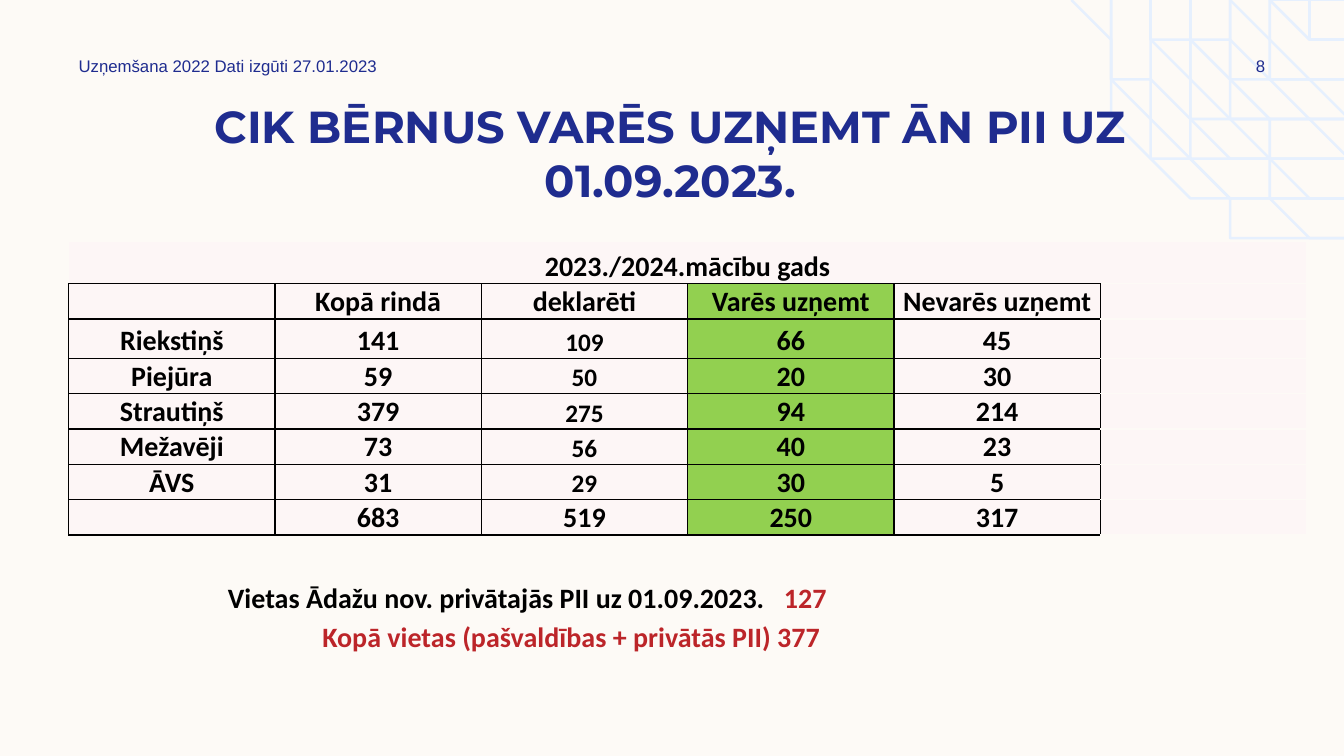
from dataclasses import dataclass
from math import asin, cos, pi, sin

from pptx import Presentation
from pptx import util as u
from pptx.dml.color import RGBColor
from pptx.enum import text
from pptx.oxml import parse_xml
from pptx.oxml.ns import nsdecls

WIDTH, HEIGHT = 33.87, 19.05
COL_WIDTH = 5.2
ROW_HEIGHTS = [1.07, 0.89, 0.99] + [0.89] * 5
CAPTION = "2023./2024.mācību gads"
ROWS = [
    ["", "Kopā rindā", "deklarēti", "Varēs uzņemt", "Nevarēs uzņemt"],
    ["Riekstiņš", "141", "109", "66", "45"],
    ["Piejūra", "59", "50", "20", "30"],
    ["Strautiņš", "379", "275", "94", "214"],
    ["Mežavēji", "73", "56", "40", "23"],
    ["ĀVS", "31", "29", "30", "5"],
    ["", "683", "519", "250", "317"],
]
DECLARED, ADMITTED = 2, 3


@dataclass(frozen=True)
class Theme:
    paper: str = "FDFAF6"
    ring: str = "E6F0FE"
    navy: str = "1F2C8F"
    black: str = "000000"
    red: str = "BC2529"
    cell: str = "FDF6F6"
    green: str = "92D050"
    title: int = 32
    body: int = 20
    declared: int = 18
    small: int = 12


class Deck:
    def __init__(self, theme):
        self.theme = theme
        self.prs = Presentation()
        self.prs.slide_width, self.prs.slide_height = u.Cm(WIDTH), u.Cm(HEIGHT)
        self.s = self.prs.slides.add_slide(self.prs.slide_layouts[6])
        self.paint(self.s.background.fill, theme.paper)

    @staticmethod
    def paint(fill, color):
        fill.solid()
        fill.fore_color.rgb = RGBColor.from_string(color)

    @staticmethod
    def style(p, font, size, color, bold=False, align=text.PP_ALIGN.LEFT):
        p.alignment = align
        p.font.name, p.font.size, p.font.bold = font, u.Pt(size), bold
        p.font.color.rgb = RGBColor.from_string(color)

    def text_box(self, x, y, w, h, anchor=text.MSO_ANCHOR.TOP):
        tf = self.s.shapes.add_textbox(u.Cm(x), u.Cm(y), u.Cm(w), u.Cm(h)).text_frame
        tf.word_wrap, tf.vertical_anchor = True, anchor
        return tf

    def label(self, words, x, y, w, h, font, size, bold=False,
              align=text.PP_ALIGN.LEFT, anchor=text.MSO_ANCHOR.MIDDLE):
        p = self.text_box(x, y, w, h, anchor).paragraphs[0]
        p.text = words
        self.style(p, font, size, self.theme.navy, bold, align)

    def rings(self, cx, cy, first, step, count, line_width):
        """Draw concentric arcs, cut off at the top and right slide edges."""
        builder = None
        for i in range(count):
            radius = first + i * step
            start = asin(-cy / radius)
            segments = 4 + i // 2
            angles = [start + (pi / 2 - start) * k / segments for k in range(segments + 1)]
            points = [(cx - radius * cos(a), cy + radius * sin(a)) for a in angles]
            if builder is None:
                builder = self.s.shapes.build_freeform(*points[0], scale=u.Cm(1))
            else:
                builder.move_to(*points[0])
            builder.add_line_segments(points[1:], close=False)
        sp = builder.convert_to_shape()
        sp.shadow.inherit = False
        sp.fill.background()
        sp.line.width = u.Pt(line_width)
        sp.line.color.rgb = RGBColor.from_string(self.theme.ring)

    def cell(self, cell, words, size, fill, edges):
        """Fill one cell; edges holds the left, right, top and bottom line colours."""
        cell.margin_left = cell.margin_right = cell.margin_top = u.Cm(0.02)
        cell.margin_bottom = 0
        cell.vertical_anchor = text.MSO_ANCHOR.BOTTOM
        p = cell.text_frame.paragraphs[0]
        p.text = words
        self.style(p, "Calibri", size, self.theme.black, True, text.PP_ALIGN.CENTER)
        tc_pr = cell._tc.get_or_add_tcPr()
        for side, color in zip("LRTB", edges):
            tc_pr.append(parse_xml(
                f'<a:ln{side} {nsdecls("a")} w="{u.Pt(1)}"><a:solidFill>'
                f'<a:srgbClr val="{color}"/></a:solidFill></a:ln{side}>'))
        self.paint(cell.fill, fill)

    def admission_table(self, x, y):
        t = self.theme
        n_cols = len(ROWS[0]) + 1
        table = self.s.shapes.add_table(
            len(ROW_HEIGHTS), n_cols, u.Cm(x), u.Cm(y),
            u.Cm(COL_WIDTH * n_cols), u.Cm(sum(ROW_HEIGHTS))).table
        table.first_row = table.horz_banding = False
        for col in table.columns:
            col.width = u.Cm(COL_WIDTH)
        for row, height in zip(table.rows, ROW_HEIGHTS):
            row.height = u.Cm(height)

        for c in range(n_cols):
            self.cell(table.cell(0, c), CAPTION if c == 0 else "", t.body, t.cell,
                      [t.paper] * 3 + [t.black])
        table.cell(0, 0).merge(table.cell(0, n_cols - 1))
        for r, row in enumerate(ROWS, 1):
            for c, words in enumerate(row):
                size = t.declared if c == DECLARED and 1 < r < len(ROWS) else t.body
                fill = t.green if c == ADMITTED else t.cell
                self.cell(table.cell(r, c), words, size, fill, [t.black] * 4)
            self.cell(table.cell(r, n_cols - 1), "", t.body, t.cell,
                      [t.black] + [t.paper] * 3)

    def totals(self, lines, x, y, w, h):
        tf = self.text_box(x, y, w, h)
        for i, runs in enumerate(lines):
            p = tf.add_paragraph() if i else tf.paragraphs[0]
            self.style(p, "Calibri", self.theme.body, self.theme.black, True,
                       text.PP_ALIGN.RIGHT)
            p.space_before = u.Pt(3.6)
            for words, color in runs:
                r = p.add_run()
                r.text = words
                r.font.color.rgb = RGBColor.from_string(color)


def main():
    t = Theme()
    deck = Deck(t)
    deck.rings(WIDTH, -0.4, first=0.78, step=0.354, count=17, line_width=1.8)
    deck.label("CIK BĒRNUS VARĒS UZŅEMT ĀN PII UZ 01.09.2023.", 2.08, 2.36, 29.64, 2.77,
               "Montserrat", t.title, True, text.PP_ALIGN.CENTER, text.MSO_ANCHOR.TOP)
    deck.totals([
        [("Vietas Ādažu nov. privātajās PII uz 01.09.2023.   ", t.black), ("127", t.red)],
        [("Kopā vietas (pašvaldības + privātās PII) 377 ", t.red)],
    ], 4.8, 14.5, 16.28, 2.5)
    deck.label("Uzņemšana 2022 Dati izgūti 27.01.2023", 1.73, 1.27, 8.89, 0.76,
               "Arial", t.small)
    deck.label("8", 30.4, 1.27, 2.74, 0.76, "Arial", t.small, align=text.PP_ALIGN.CENTER)
    deck.admission_table(1.73, 6.08)
    deck.prs.save("out.pptx")


if __name__ == "__main__":
    main()
